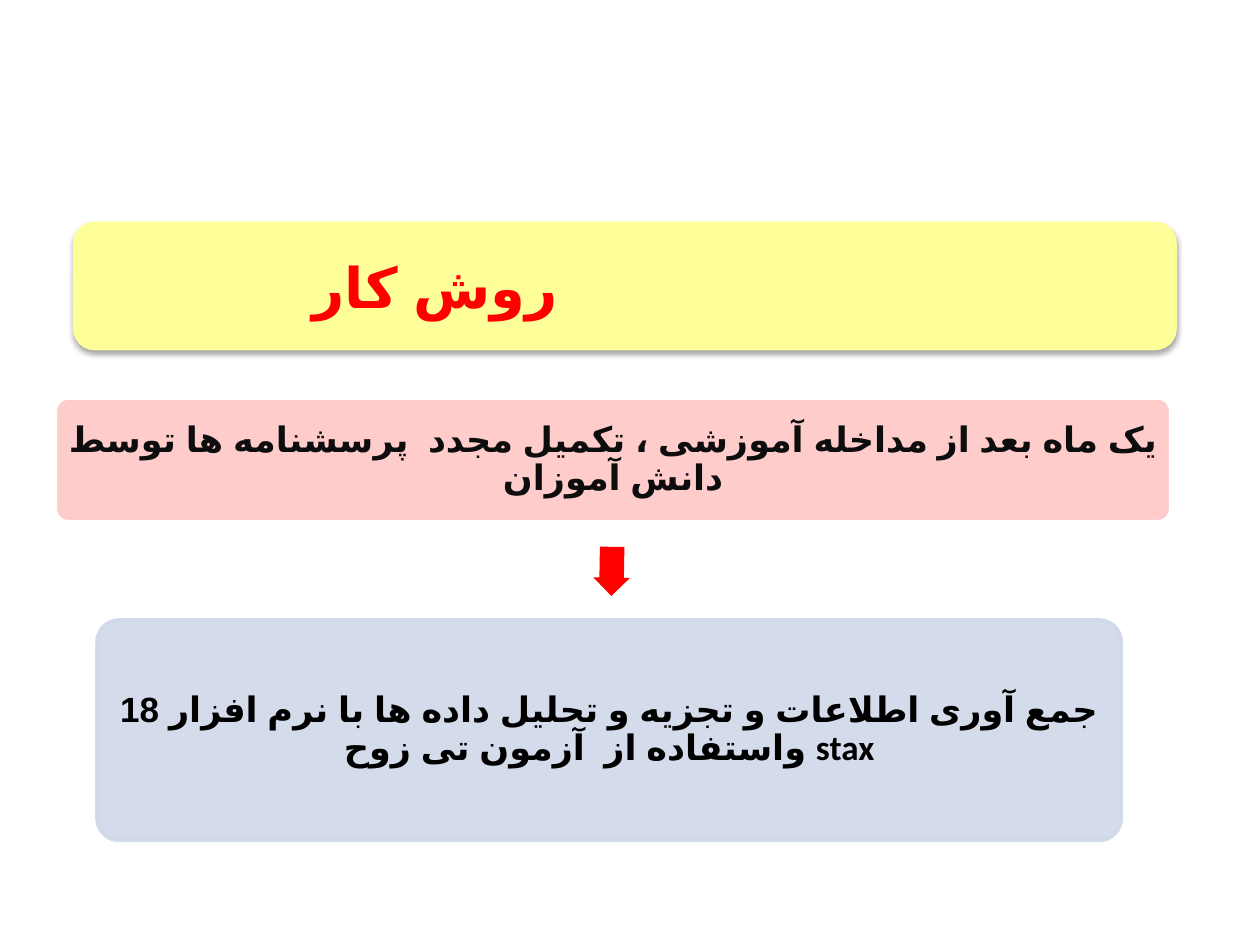
from lxml import etree
from pptx import Presentation
from pptx.dml.color import RGBColor
from pptx.enum.lang import MSO_LANGUAGE_ID
from pptx.enum.shapes import MSO_SHAPE
from pptx.enum.text import MSO_ANCHOR, PP_ALIGN
from pptx.oxml.ns import qn
from pptx.util import Pt

ROUND = MSO_SHAPE.ROUNDED_RECTANGLE
ARROW = MSO_SHAPE.RIGHT_ARROW
MIDDLE = MSO_ANCHOR.MIDDLE
CENTER, RIGHT = PP_ALIGN.CENTER, PP_ALIGN.RIGHT
FARSI = MSO_LANGUAGE_ID.FARSI

THEME = dict(
    font="Calibri", script="Arial", head=32, body=20, rule=2,
    red="FF0000", yellow="FFFF99", pink="FFCCCC", blue="D0D8E8",
    white="FFFFFF", dark="0D0D0D", black="000000",
)

TITLE = dict(text="روش کار", box=(41.76, 126.72, 630.72, 73.44))
STEPS = [
    dict(text="یک ماه بعد از مداخله آموزشی ، تکمیل مجدد  پرسشنامه ها توسط دانش آموزان",
         box=(31.68, 227.52, 637.2, 70.56), fill="pink", edge="white", ink="dark", alpha=100),
    dict(text="جمع آوری اطلاعات و تجزیه و تحلیل داده ها با نرم افزار 18 stax واستفاده از  آزمون تی زوح",
         box=(55.44, 354.24, 585.36, 126), fill="blue", edge="blue", ink="black", alpha=90),
]
LINK = dict(box=(335.52, 316.08, 28.08, 20.88), turn=90.9)


def tint(name):
    return RGBColor.from_string(THEME[name])


def fade(fill, alpha):
    if alpha < 100:
        node = fill._xPr.find(qn("a:solidFill"))[0]
        etree.SubElement(node, qn("a:alpha"), val=str(alpha * 1000))


def add_block(slide, kind, box, fill, edge=None, alpha=100, adjust=()):
    shape = slide.shapes.add_shape(kind, *map(Pt, box))
    shape.shadow.inherit = False
    for i, value in enumerate(adjust):
        shape.adjustments[i] = value
    shape.fill.solid()
    shape.fill.fore_color.rgb = tint(fill)
    fade(shape.fill, alpha)
    if edge:
        shape.line.width = Pt(THEME["rule"])
        shape.line.color.rgb = tint(edge)
        fade(shape.line.fill, alpha)
    else:
        shape.line.fill.background()
    return shape


def add_text(shape, text, size, ink, align=CENTER, inset=(2, 2, 2, 2), gap=None):
    frame = shape.text_frame
    frame.word_wrap = True
    frame.vertical_anchor = MIDDLE
    (frame.margin_left, frame.margin_top,
     frame.margin_right, frame.margin_bottom) = map(Pt, inset)
    para = frame.paragraphs[0]
    para.alignment = align
    para.line_spacing = gap
    para._p.get_or_add_pPr().set("rtl", "1")
    run = para.add_run()
    run.text = text
    run.font.name = THEME["font"]
    run.font.size = Pt(size)
    run.font.bold = True
    run.font.color.rgb = tint(ink)
    run.font.language_id = FARSI
    etree.SubElement(run.font._rPr, qn("a:cs"), typeface=THEME["script"])


def cast(shape, blur, dist, angle, alpha):
    group = shape._element.spPr.find(qn("a:effectLst"))
    outer = etree.SubElement(
        group, qn("a:outerShdw"), blurRad=str(Pt(blur)), dist=str(Pt(dist)),
        dir=str(angle * 60000), rotWithShape="0")
    color = etree.SubElement(outer, qn("a:srgbClr"), val=THEME["black"])
    etree.SubElement(color, qn("a:alpha"), val=str(alpha * 1000))


def main():
    deck = Presentation()
    deck.slide_width, deck.slide_height = Pt(720), Pt(540)
    slide = deck.slides.add_slide(deck.slide_layouts[6])

    for step in STEPS:
        card = add_block(slide, ROUND, step["box"], step["fill"],
                         step["edge"], step["alpha"], adjust=(0.1,))
        add_text(card, step["text"], THEME["body"], step["ink"], gap=0.9)

    link = add_block(slide, ARROW, LINK["box"], "red", adjust=(0.67, 0.5))
    link.rotation = LINK["turn"]

    title = add_block(slide, ROUND, TITLE["box"], "yellow")
    cast(title, blur=3.1, dist=1.8, angle=90, alpha=35)
    add_text(title, TITLE["text"], THEME["head"], "red", align=RIGHT,
             inset=(7.2, 3.6, 350, 3.6))
    deck.save("out.pptx")


if __name__ == "__main__":
    main()
